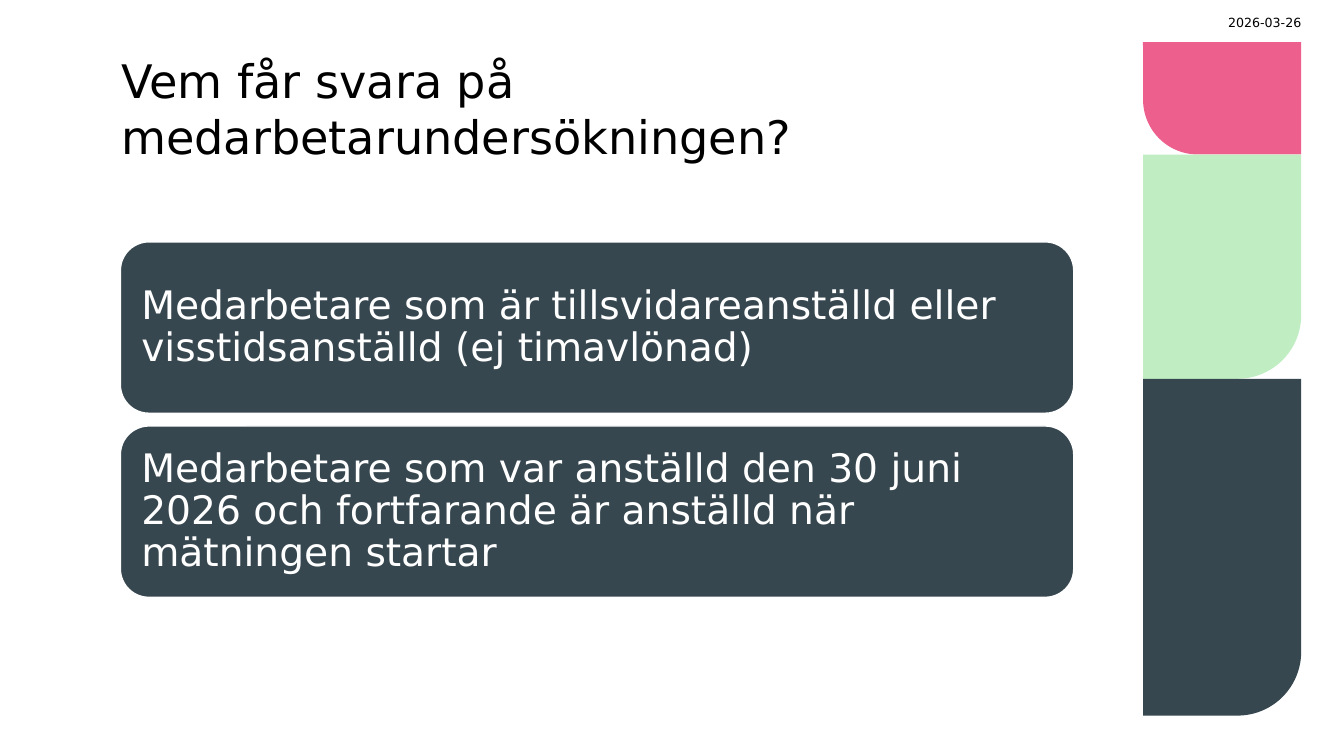
from pptx import Presentation
from pptx.dml.color import RGBColor
from pptx.enum import shapes, text
from pptx.util import Pt

COLORS = {"pink": "ED5F8C", "green": "C0EEC2", "slate": "37474F",
          "white": "FFFFFF", "black": "000000"}


def write(tf, content, size, color="black", anchor="MIDDLE", align="LEFT",
          inset=0, spacing=None):
    tf.word_wrap = True
    tf.auto_size = text.MSO_AUTO_SIZE.NONE
    tf.vertical_anchor = text.MSO_ANCHOR[anchor]
    tf.margin_left = tf.margin_right = Pt(inset)
    tf.margin_top = tf.margin_bottom = Pt(inset)
    p = tf.paragraphs[0]
    p.alignment = text.PP_ALIGN[align]
    if spacing:
        p.line_spacing = spacing
    r = p.add_run()
    r.text = content
    r.font.name = "DejaVu Sans"
    r.font.size = Pt(size)
    r.font.color.rgb = RGBColor.from_string(COLORS[color])


prs = Presentation()
prs.slide_width, prs.slide_height = Pt(960), Pt(540)
s = prs.slides.add_slide(prs.slide_layouts[5])

blocks = [("pink", 30.2, 80.2, 0.489, True),
          ("green", 110.4, 160.2, 0.403, False),
          ("slate", 270.6, 240.6, 0.403, False)]
for color, top, height, rounding, flip_h in blocks:
    sp = s.shapes.add_shape(shapes.MSO_SHAPE.ROUND_1_RECTANGLE,
                            Pt(816.5), Pt(top), Pt(113), Pt(height))
    sp.shadow.inherit = False
    sp.adjustments[0] = rounding
    sp.fill.solid()
    sp.fill.fore_color.rgb = RGBColor.from_string(COLORS[color])
    sp.line.fill.background()
    xfrm = sp.element.spPr.xfrm
    xfrm.set("flipV", "1")
    if flip_h:
        xfrm.set("flipH", "1")

title = s.shapes.title
title.left, title.top, title.width, title.height = Pt(86.6), Pt(34), Pt(680.4), Pt(82.8)
write(title.text_frame, "Vem får svara på medarbetarundersökningen?", 33, anchor="BOTTOM")

date = s.shapes.add_textbox(Pt(858.2), Pt(10.8), Pt(71.3), Pt(10.8))
write(date.text_frame, "2026-03-26", 9, align="RIGHT")

cards = ["Medarbetare som är tillsvidareanställd eller visstidsanställd (ej timavlönad)",
         "Medarbetare som var anställd den 30 juni 2026 och fortfarande är anställd när mätningen startar"]
for i, content in enumerate(cards):
    sp = s.shapes.add_shape(shapes.MSO_SHAPE.ROUNDED_RECTANGLE,
                            Pt(86), Pt(172.8 + i * 131.5), Pt(681), Pt(122.4))
    sp.shadow.inherit = False
    sp.fill.solid()
    sp.fill.fore_color.rgb = RGBColor.from_string(COLORS["slate"])
    sp.line.color.rgb = RGBColor.from_string(COLORS["white"])
    sp.line.width = Pt(1)
    write(sp.text_frame, content, 28, color="white", inset=9, spacing=0.9)

prs.save("out.pptx")
